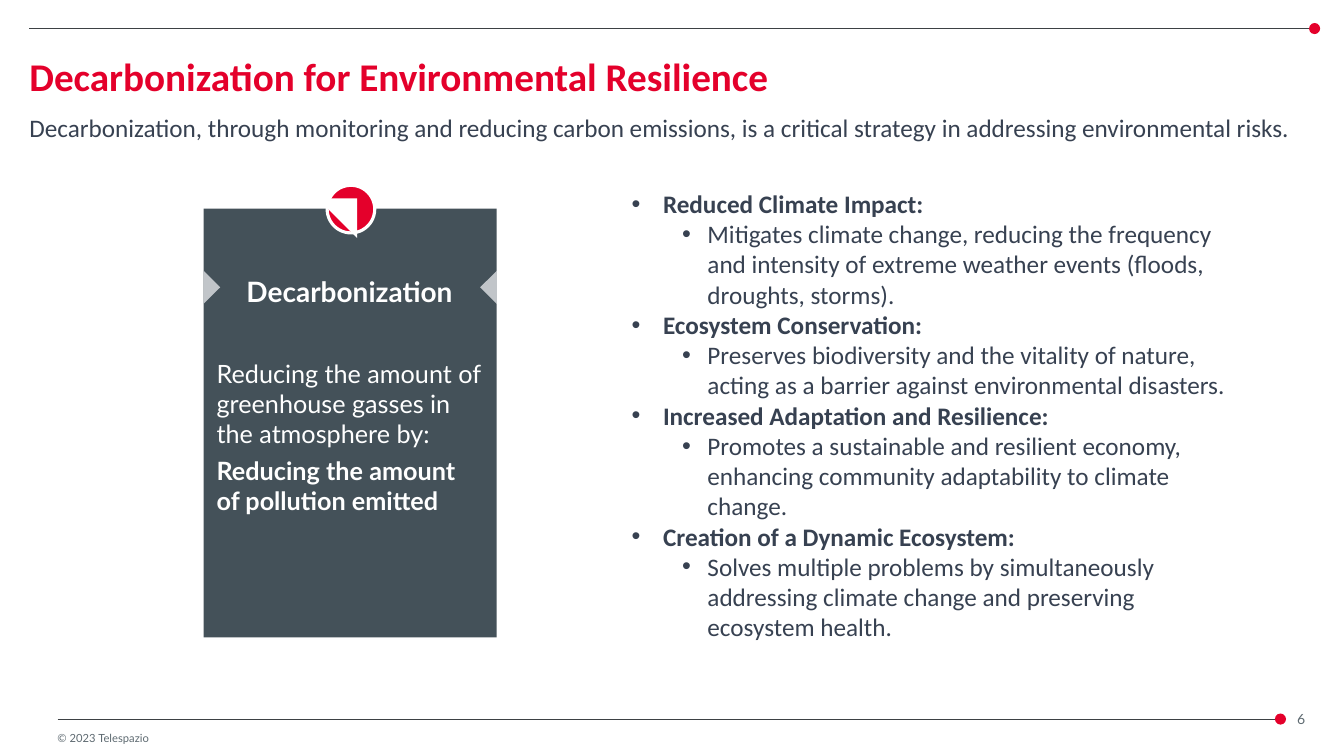
from dataclasses import dataclass

from lxml import etree
from pptx import Presentation
from pptx.dml.color import RGBColor
from pptx.enum import shapes, text
from pptx.oxml import ns
from pptx.util import Cm, Pt

RED = RGBColor(0xE4, 0x00, 0x2B)
INK = RGBColor(0x37, 0x41, 0x51)
SLATE = RGBColor(0x44, 0x51, 0x59)
RULE_GREY = RGBColor(0x3D, 0x41, 0x44)
FOOTER_GREY = RGBColor(0x5E, 0x6A, 0x71)
NOTCH_GREY = RGBColor(0xC1, 0xC5, 0xC9)
WHITE = RGBColor(0xFF, 0xFF, 0xFF)

Kind = shapes.MSO_SHAPE
Anchor = text.MSO_ANCHOR
DOT = 0.28
PANEL_LEFT, PANEL_TOP, PANEL_WIDTH, PANEL_HEIGHT = 5.13, 5.26, 7.39, 10.8
PANEL_CENTRE = PANEL_LEFT + PANEL_WIDTH / 2
NOTCH_WIDTH, NOTCH_DEPTH, NOTCH_CENTRE = 0.83, 0.42, 7.24
BADGE = 1.2


@dataclass
class Box:
    left: float
    top: float
    width: float
    height: float

    def lengths(self):
        return [Cm(v) for v in (self.left, self.top, self.width, self.height)]


@dataclass
class Style:
    font: str
    size: float
    color: RGBColor
    bold: bool = False


@dataclass
class Rule:
    left: float
    right: float
    y: float


@dataclass
class Benefit:
    heading: str
    detail: str


RULES = [Rule(0.74, 32.99, 0.72), Rule(1.45, 32.13, 18.12)]

BENEFITS = [
    Benefit("Reduced Climate Impact:",
            "Mitigates climate change, reducing the frequency and intensity of "
            "extreme weather events (floods, droughts, storms)."),
    Benefit("Ecosystem Conservation:",
            "Preserves biodiversity and the vitality of nature, acting as a "
            "barrier against environmental disasters."),
    Benefit("Increased Adaptation and Resilience:",
            "Promotes a sustainable and resilient economy, enhancing community "
            "adaptability to climate change."),
    Benefit("Creation of a Dynamic Ecosystem:",
            "Solves multiple problems by simultaneously addressing climate "
            "change and preserving ecosystem health."),
]

CHECK_OUTLINE = [
    (9.19, 4.98), (9.14, 4.96), (9.09, 4.98), (8.71, 5.41), (8.59, 5.23),
    (8.53, 5.21), (8.48, 5.23), (8.47, 5.28), (8.48, 5.33), (8.66, 5.54),
    (8.71, 5.56), (8.76, 5.54), (9.19, 5.08), (9.21, 5.03),
]


def paint(shape, fill: RGBColor):
    shape.shadow.inherit = False
    shape.fill.solid()
    shape.fill.fore_color.rgb = fill
    shape.line.fill.background()


def add_filled(slide, kind, box: Box, fill: RGBColor):
    shape = slide.shapes.add_shape(kind, *box.lengths())
    paint(shape, fill)
    return shape


def add_rule(slide, rule: Rule):
    """Draw a thin line that ends in a red dot."""
    line = slide.shapes.add_connector(
        shapes.MSO_CONNECTOR.STRAIGHT,
        Cm(rule.left), Cm(rule.y), Cm(rule.right), Cm(rule.y))
    line.line.color.rgb = RULE_GREY
    line.line.width = Pt(0.75)
    etree.SubElement(line._element.spPr, ns.qn("a:effectLst"))
    add_filled(slide, Kind.OVAL, Box(rule.right, rule.y - DOT / 2, DOT, DOT), RED)


def format_paragraph(paragraph, style: Style):
    for run in paragraph.runs:
        run.font.name = style.font
        run.font.size = Pt(style.size)
        run.font.bold = style.bold
        run.font.color.rgb = style.color


def clear_frame(frame, anchor=Anchor.TOP):
    frame.word_wrap = True
    frame.auto_size = text.MSO_AUTO_SIZE.NONE
    frame.vertical_anchor = anchor
    frame.margin_left = frame.margin_right = 0
    frame.margin_top = frame.margin_bottom = 0


def add_text(slide, box: Box, content: str, style: Style, anchor=Anchor.TOP):
    frame = slide.shapes.add_textbox(*box.lengths()).text_frame
    clear_frame(frame, anchor)
    frame.text = content
    for paragraph in frame.paragraphs:
        format_paragraph(paragraph, style)
    return frame


def add_title(slide):
    title = slide.shapes.title
    title.left, title.top, title.width, title.height = Box(0.74, 1.17, 32.41, 1.35).lengths()
    clear_frame(title.text_frame, Anchor.BOTTOM)
    title.text_frame.text = "Decarbonization for Environmental Resilience"
    heading = title.text_frame.paragraphs[0]
    heading.alignment = text.PP_ALIGN.LEFT
    heading.line_spacing = 0.9
    format_paragraph(heading, Style("Calibri", 28, RED, True))


def set_bullet(paragraph, margin: float, hanging: float):
    properties = paragraph._p.get_or_add_pPr()
    properties.set("marL", str(Cm(margin)))
    properties.set("indent", str(-Cm(hanging)))
    etree.SubElement(properties, ns.qn("a:buFont")).set("typeface", "Arial")
    etree.SubElement(properties, ns.qn("a:buChar")).set("char", "•")


def add_benefits(slide):
    frame = slide.shapes.add_textbox(*Box(14.4, 4.62, 16.74, 12.57).lengths()).text_frame
    frame.word_wrap = True
    frame.text = "\n".join(f"{b.heading}\n{b.detail}" for b in BENEFITS)
    for index, paragraph in enumerate(frame.paragraphs):
        is_detail = index % 2 == 1
        paragraph.level = 2 if is_detail else 1
        set_bullet(paragraph, *((3.18, 0.64) if is_detail else (2.06, 0.79)))
        format_paragraph(paragraph, Style("Calibri", 18, INK, not is_detail))


def add_notch(slide, centre_x: float, rotation: int):
    box = Box(centre_x - NOTCH_WIDTH / 2, NOTCH_CENTRE - NOTCH_DEPTH / 2,
              NOTCH_WIDTH, NOTCH_DEPTH)
    add_filled(slide, Kind.ISOSCELES_TRIANGLE, box, NOTCH_GREY).rotation = rotation


def add_check_badge(slide):
    badge = add_filled(slide, Kind.OVAL,
                       Box(PANEL_CENTRE + 0.02 - BADGE / 2, 4.67, BADGE, BADGE), RED)
    badge.line.color.rgb = WHITE
    badge.line.width = Pt(2.25)
    start, *rest = CHECK_OUTLINE
    builder = slide.shapes.build_freeform(*start, scale=Cm(1))
    builder.add_line_segments(rest)
    paint(builder.convert_to_shape(), WHITE)


def add_panel(slide):
    add_filled(slide, Kind.RECTANGLE,
               Box(PANEL_LEFT, PANEL_TOP, PANEL_WIDTH, PANEL_HEIGHT), SLATE)
    add_notch(slide, PANEL_LEFT + NOTCH_DEPTH / 2, 90)
    add_notch(slide, PANEL_LEFT + PANEL_WIDTH - NOTCH_DEPTH / 2, 270)
    body = add_text(slide, Box(5.46, 8.94, 6.71, 4.11),
                    "Reducing the amount of greenhouse gasses in the atmosphere by:\n"
                    "Reducing the amount of pollution emitted",
                    Style("Lato", 18, WHITE))
    body.margin_top = Cm(0.08)
    method = body.paragraphs[1]
    method.space_before = Pt(4.9)
    format_paragraph(method, Style("Lato", 18, WHITE, True))
    label = add_text(slide, Box(5.99, 6.91, 5.64, 0.86), "Decarbonization",
                     Style("Lato", 20, WHITE, True), Anchor.MIDDLE)
    label.paragraphs[0].alignment = text.PP_ALIGN.CENTER
    add_check_badge(slide)


def main():
    deck = Presentation()
    deck.slide_width, deck.slide_height = Cm(33.87), Cm(19.05)
    slide = deck.slides.add_slide(deck.slide_layouts.get_by_name("Title Only"))
    for rule in RULES:
        add_rule(slide, rule)
    add_title(slide)
    summary = add_text(slide, Box(0.74, 2.92, 32.41, 1.3),
                       "Decarbonization, through monitoring and reducing carbon emissions, "
                       "is a critical strategy in addressing environmental risks.",
                       Style("Calibri", 18, INK))
    summary.paragraphs[0].line_spacing = 0.9
    add_benefits(slide)
    add_panel(slide)
    add_text(slide, Box(1.45, 18.42, 5.84, 0.33), "© 2023 Telespazio",
             Style("Lato", 8, FOOTER_GREY))
    add_text(slide, Box(32.69, 17.83, 1.07, 0.56), "6",
             Style("Lato", 10, FOOTER_GREY), Anchor.MIDDLE)
    deck.save("out.pptx")


if __name__ == "__main__":
    main()
